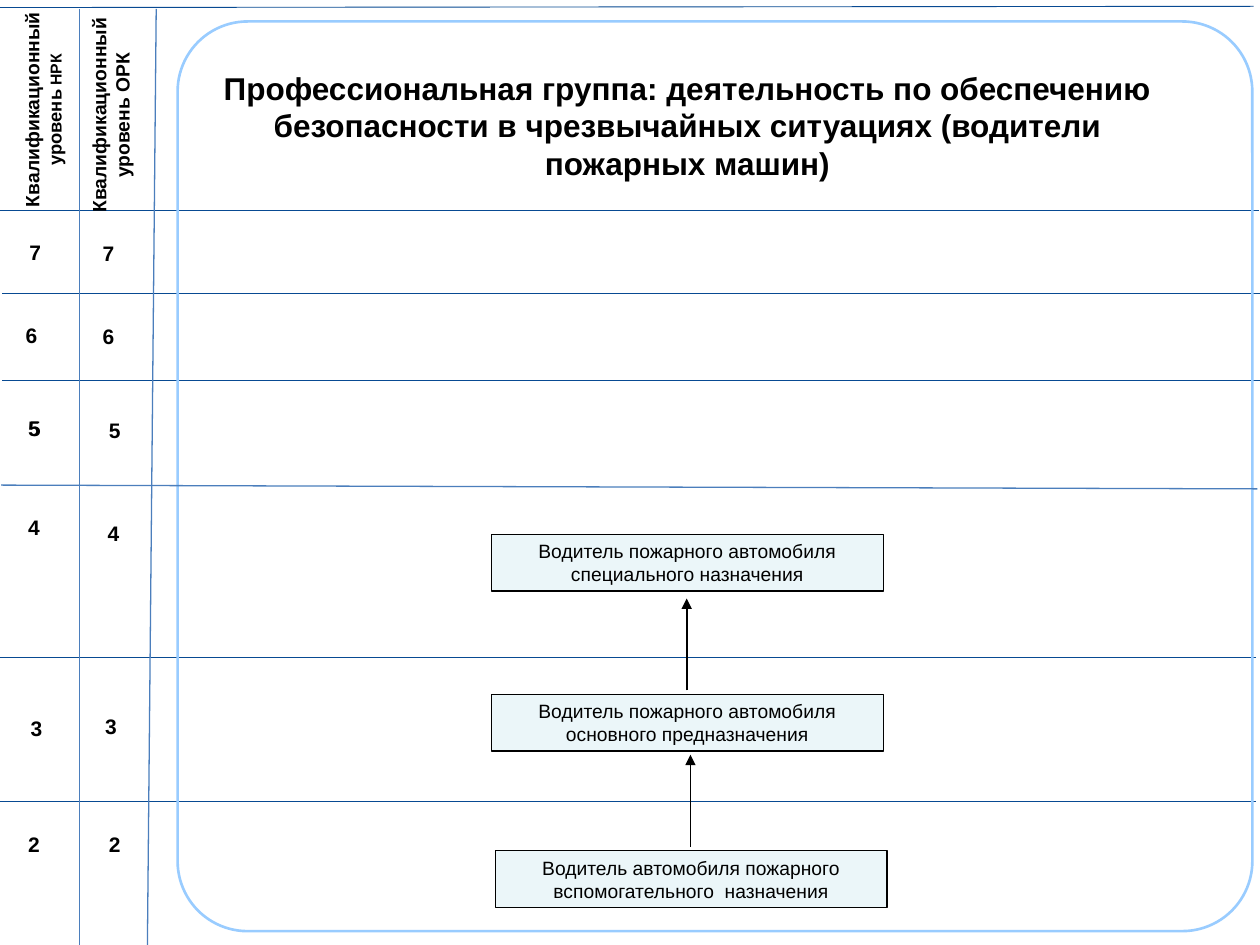
from pptx import Presentation
from pptx import util as u
from pptx.dml.color import RGBColor
from pptx.enum import shapes, text
from pptx.oxml.ns import qn
from lxml import etree

FONT = "Arial"
BLACK, NAVY, BLUE = "000000", "084A92", "4B7EBC"
FRAME_BLUE, PALE_BLUE = "99CCFF", "EBF6F9"
LABEL_SIZE = (0.38, 0.28)
JOB_SIZE = (3.11, 0.45)


def colour(value):
    return RGBColor.from_string(value)


def set_font(font, size, bold=False):
    font.name = FONT
    font.size = u.Pt(size)
    font.bold = bold
    font.color.rgb = colour(BLACK)


def add_line(slide, start, end, line_colour, width, arrow=False):
    points = [u.Inches(value) for value in (*start, *end)]
    line = slide.shapes.add_connector(shapes.MSO_CONNECTOR.STRAIGHT, *points)
    line.line.color.rgb = colour(line_colour)
    line.line.width = u.Pt(width)
    properties = line._element.spPr
    if arrow:
        outline = properties.find(qn("a:ln"))
        etree.SubElement(outline, qn("a:tailEnd"), type="triangle")
    etree.SubElement(properties, qn("a:effectLst"))


def add_box(slide, left, top, width, height, line=None, line_width=0.75,
            fill=None, rounding=0):
    place = [u.Inches(value) for value in (left, top, width, height)]
    box = slide.shapes.add_shape(shapes.MSO_SHAPE.ROUNDED_RECTANGLE, *place)
    box.adjustments[0] = rounding
    box.shadow.inherit = False
    if fill:
        box.fill.solid()
        box.fill.fore_color.rgb = colour(fill)
    else:
        box.fill.background()
    if line:
        box.line.color.rgb = colour(line)
        box.line.width = u.Pt(line_width)
    else:
        box.line.fill.background()
    return box


def write(box, spans, bold=False, vertical=False):
    """Fill a box with one centred paragraph of (wording, size) spans."""
    frame = box.text_frame
    frame.word_wrap = True
    frame.vertical_anchor = text.MSO_ANCHOR.MIDDLE
    frame.margin_left = frame.margin_right = u.Inches(0.04)
    frame.margin_top = frame.margin_bottom = u.Inches(0.04)
    if vertical:
        frame._txBody.bodyPr.set("vert", "vert270")
    para = frame.paragraphs[0]
    para.alignment = text.PP_ALIGN.CENTER
    for wording, size in spans:
        span = para.add_run()
        span.text = wording
        set_font(span.font, size, bold)


def add_title(slide, wording):
    title = slide.shapes.title
    title.left, title.top = u.Inches(1.64), u.Inches(0.49)
    title.width, title.height = u.Inches(7.63), u.Inches(1.01)
    frame = title.text_frame
    frame.text = wording
    frame.word_wrap = True
    frame.auto_size = text.MSO_AUTO_SIZE.NONE
    frame.vertical_anchor = text.MSO_ANCHOR.MIDDLE
    para = frame.paragraphs[0]
    para.alignment = text.PP_ALIGN.CENTER
    set_font(para.font, 18, True)


def add_level(slide, level, left, top, bold=True):
    label = add_box(slide, left, top, *LABEL_SIZE)
    write(label, [(level, 12)], bold)


def add_job(slide, wording, left, top):
    job = add_box(slide, left, top, *JOB_SIZE, line=BLACK, fill=PALE_BLUE)
    write(job, [(wording, 11)])


def main():
    deck = Presentation()
    deck.slide_width, deck.slide_height = u.Inches(10), u.Inches(7.5)
    slide = deck.slides.add_slide(deck.slide_layouts[5])
    add_title(slide, "Профессиональная группа: деятельность по обеспечению "
                     "безопасности в чрезвычайных ситуациях "
                     "(водители пожарных машин)")

    # Row rules
    add_line(slide, (-0.03, 0.06), (9.95, 0.05), NAVY, 0.5)
    for left, top in ((-0.01, 1.67), (0.02, 2.33), (0.02, 3.02),
                      (-0.03, 5.22), (-0.03, 6.36)):
        add_line(slide, (left, top), (left + 10, top), NAVY, 0.5)

    # Frame around the professional group
    add_box(slide, 1.41, 0.17, 8.53, 7.22, line=FRAME_BLUE, line_width=1.5,
            rounding=0.077)

    # Column rules and the rule above level 4
    for start, end in (((0.63, 0.07), (0.63, 7.53)),
                       ((1.24, 0.07), (1.17, 7.52)),
                       ((0.01, 3.85), (9.98, 3.88))):
        add_line(slide, start, end, BLUE, 0.75)

    # Column headings
    national = add_box(slide, 0.12, -0.01, 0.44, 1.76)
    write(national, [("Квалификационный", 11), (" ", 9), ("уровень", 10.5),
                     (" НРК", 9)], bold=True, vertical=True)
    sector = add_box(slide, 0.65, 0.1, 0.45, 1.63)
    write(sector, [("Квалификационный уровень ОРК", 11)], bold=True,
          vertical=True)

    # Level numbers: national place, then sector place
    levels = (("7", (0.09, 1.86), (0.67, 1.87)),
              ("6", (0.06, 2.52), (0.67, 2.53)),
              ("5", (0.08, 3.26), (0.72, 3.27)),
              ("4", (0.08, 4.04), (0.71, 4.09)),
              ("3", (0.1, 5.64), (0.69, 5.62)),
              ("2", (0.08, 6.56), (0.72, 6.56)))
    for level, *places in levels:
        for place in places:
            add_level(slide, level, *place)
    add_level(slide, "5", 0.09, 3.26, bold=False)

    # Jobs and the career steps between them
    add_job(slide, "Водитель автомобиля пожарного вспомогательного  назначения",
            3.93, 6.75)
    add_job(slide, "Водитель пожарного автомобиля основного предназначения",
            3.9, 5.51)
    add_job(slide, "Водитель пожарного автомобиля специального назначения",
            3.9, 4.24)
    for x, bottom in ((5.45, 5.48), (5.48, 6.72)):
        add_line(slide, (x, bottom), (x, bottom - 0.73), BLACK, 1, arrow=True)

    deck.save("out.pptx")


if __name__ == "__main__":
    main()
